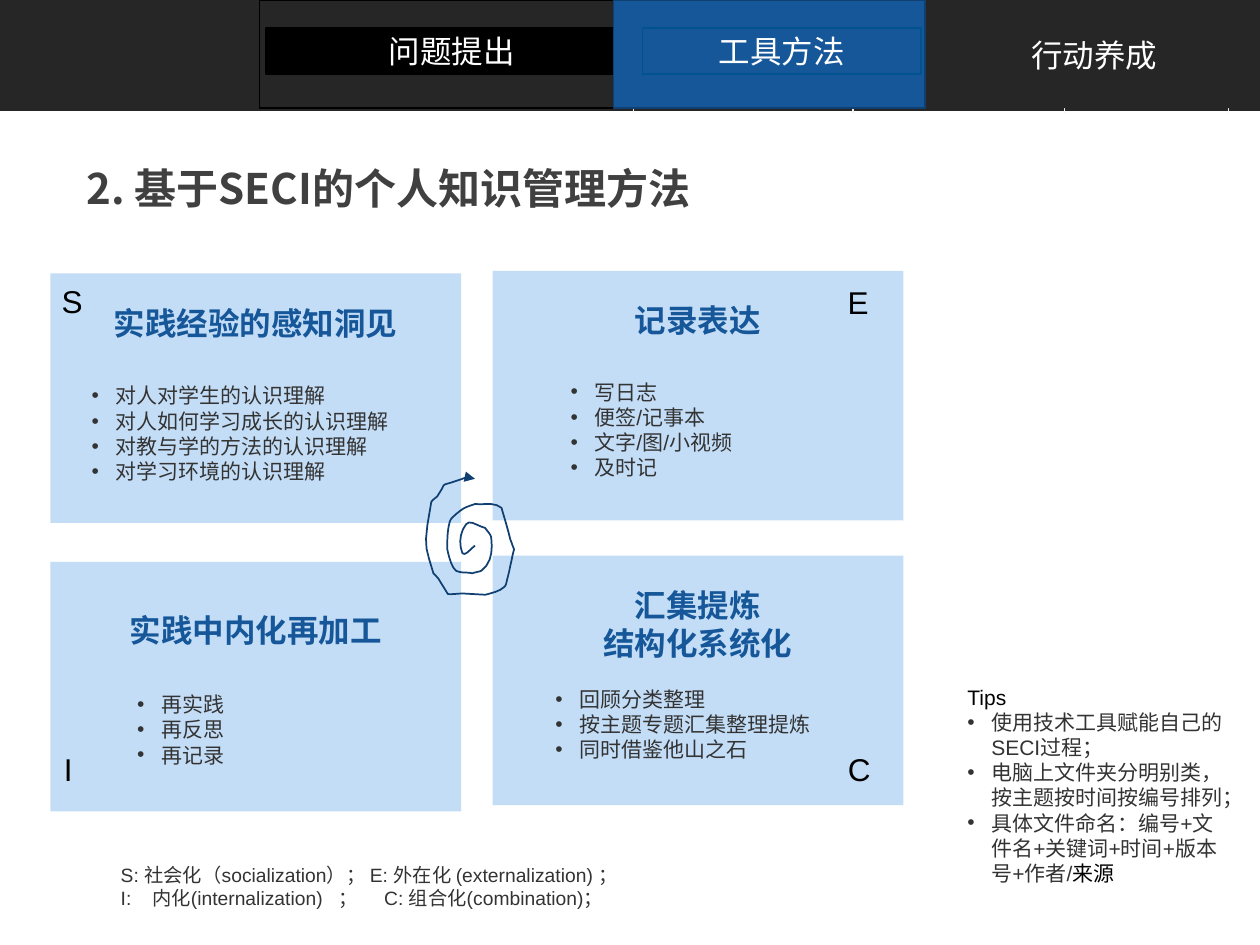
"""Build the slide on personal knowledge management with SECI."""
from dataclasses import dataclass

from lxml.etree import SubElement
from pptx import Presentation
from pptx.dml.color import RGBColor
from pptx.enum.shapes import MSO_CONNECTOR, MSO_SHAPE
from pptx.enum.text import MSO_ANCHOR, PP_ALIGN
from pptx.oxml.ns import qn
from pptx.util import Inches, Pt


@dataclass(frozen=True)
class Theme:
    band: str = "262626"
    blue: str = "165799"
    navy: str = "104071"
    tab_edge: str = "00538E"
    card: str = "C4DDF7"
    black: str = "000000"
    white: str = "FFFFFF"
    divider: str = "F2F2F2"
    title: str = "404040"
    body: str = "333333"
    font: str = "Arial"
    title_font: str = "Noto Sans CJK SC"
    title_size: int = 24
    head_size: int = 18
    body_size: int = 12
    legend_size: int = 11


THEME = Theme()


def write(paragraph, text, size=THEME.body_size, color=THEME.body, bold=False,
          font=THEME.font, align=PP_ALIGN.LEFT, bullet=False, tabs=()):
    properties = paragraph._p.get_or_add_pPr()
    if bullet:
        properties.set("marL", str(Inches(0.19)))
        properties.set("indent", str(-Inches(0.19)))
        SubElement(properties, qn("a:buFont"), typeface=THEME.font)
        SubElement(properties, qn("a:buChar"), char="•")
    if tabs:
        stops = SubElement(properties, qn("a:tabLst"))
        for stop in tabs:
            SubElement(stops, qn("a:tab"), pos=str(Inches(stop)), algn="l")
    paragraph.alignment = align
    run = paragraph.add_run()
    run.text = text
    run.font.size = Pt(size)
    run.font.bold = bold
    run.font.name = font
    run.font.color.rgb = RGBColor.from_string(color)


class SlideBuilder:
    def __init__(self, slide, theme):
        self.slide = slide
        self.theme = theme

    def fill_text(self, frame, lines, **style):
        frame.word_wrap = True
        for index, line in enumerate(lines):
            paragraph = frame.paragraphs[0] if index == 0 else frame.add_paragraph()
            write(paragraph, line, **style)

    def box(self, place, fill, edge=None):
        shape = self.slide.shapes.add_shape(MSO_SHAPE.RECTANGLE, *map(Inches, place))
        shape.shadow.inherit = False
        shape.fill.solid()
        shape.fill.fore_color.rgb = RGBColor.from_string(fill)
        if edge:
            shape.line.color.rgb = RGBColor.from_string(edge)
            shape.line.width = Pt(1)
        else:
            shape.line.fill.background()
        return shape

    def tab(self, place, label, fill, edge=None):
        frame = self.box(place, fill, edge).text_frame
        frame.vertical_anchor = MSO_ANCHOR.MIDDLE
        self.fill_text(frame, [label], size=self.theme.head_size,
                       color=self.theme.white, align=PP_ALIGN.CENTER)

    def card(self, left, top, heading, inset):
        frame = self.box((left, top, 3.26, 1.98), self.theme.card).text_frame
        frame.vertical_anchor = MSO_ANCHOR.TOP
        frame.margin_top = Inches(inset)
        self.fill_text(frame, heading, size=self.theme.head_size, bold=True,
                       color=self.theme.blue, align=PP_ALIGN.CENTER)

    def text(self, place, lines, **style):
        frame = self.slide.shapes.add_textbox(*map(Inches, place)).text_frame
        self.fill_text(frame, lines, **style)
        return frame

    def divider(self, x):
        line = self.slide.shapes.add_connector(
            MSO_CONNECTOR.STRAIGHT, *map(Inches, (x, 0, x, 0.9)))
        line.line.color.rgb = RGBColor.from_string(self.theme.divider)
        line.line.width = Pt(0.75)
        SubElement(line._element.spPr, qn("a:effectLst"))

    def spiral(self, start, curves, steps=5):
        points = []
        here = start
        for x1, y1, x2, y2, x3, y3 in curves:
            for step in range(1, steps + 1):
                t = step / steps
                weights = ((1 - t) ** 3, 3 * t * (1 - t) ** 2, 3 * t * t * (1 - t), t ** 3)
                points.append(tuple(
                    1000 * sum(w * v for w, v in zip(weights, values))
                    for values in ((here[0], x1, x2, x3), (here[1], y1, y2, y3))))
            here = (x3, y3)
        builder = self.slide.shapes.build_freeform(
            1000 * start[0], 1000 * start[1], scale=Inches(1) / 1000)
        builder.add_line_segments(points, close=False)
        shape = builder.convert_to_shape()
        shape.shadow.inherit = False
        shape.fill.background()
        shape.line.color.rgb = RGBColor.from_string(self.theme.navy)
        shape.line.width = Pt(1)
        SubElement(shape.line._get_or_add_ln(), qn("a:tailEnd"), type="triangle")


CARDS = [
    (0.4, 2.17, ["实践经验的感知洞见"], 0.24),
    (3.91, 2.15, ["记录表达"], 0.24),
    (3.91, 4.41, ["汇集提炼", "结构化系统化"], 0.24),
    (0.4, 4.46, ["实践中内化再加工"], 0.39),
]
LETTERS = [("S", 0.39, 2.19, 1.37), ("E", 6.63, 2.2, 1.37),
           ("C", 6.63, 5.9, 0.55), ("I", 0.41, 5.9, 1.37)]
LISTS = [
    ((0.63, 2.99, 2.56, 0.91),
     ["对人对学生的认识理解", "对人如何学习成长的认识理解",
      "对教与学的方法的认识理解", "对学习环境的认识理解"]),
    ((4.43, 2.96, 1.54, 0.91), ["写日志", "便签/记事本", "文字/图/小视频", "及时记"]),
    ((4.31, 5.4, 2.31, 0.71), ["回顾分类整理", "按主题专题汇集整理提炼", "同时借鉴他山之石"]),
    ((0.99, 5.44, 1.85, 0.71), ["再实践", "再反思", "再记录"]),
]
TIPS = ["使用技术工具赋能自己的SECI过程；", "电脑上文件夹分明别类，按主题按时间按编号排列；",
        "具体文件命名：编号+文件名+关键词+时间+版本号+作者/"]
SPIRAL_START = (3.77, 4.33)
SPIRAL = [
    (3.74, 4.35, 3.69, 4.42, 3.67, 4.39), (3.64, 4.32, 3.65, 4.22, 3.7, 4.16),
    (3.73, 4.12, 3.8, 4.18, 3.85, 4.19), (3.87, 4.22, 3.9, 4.24, 3.9, 4.28),
    (3.91, 4.37, 3.9, 4.47, 3.82, 4.53), (3.8, 4.54, 3.77, 4.54, 3.75, 4.55),
    (3.71, 4.54, 3.66, 4.55, 3.62, 4.53), (3.58, 4.5, 3.56, 4.4, 3.55, 4.36),
    (3.55, 4.28, 3.55, 4.21, 3.57, 4.14), (3.58, 4.11, 3.6, 4.1, 3.62, 4.08),
    (3.69, 4.02, 3.69, 4.03, 3.77, 4), (3.84, 4.01, 3.92, 3.98, 3.98, 4.03),
    (3.98, 4.03, 4.04, 4.23, 4.05, 4.28), (4.05, 4.28, 4.08, 4.36, 4.08, 4.36),
    (4.06, 4.43, 4.05, 4.51, 4.03, 4.58), (4.02, 4.61, 4.02, 4.65, 4, 4.66),
    (3.96, 4.7, 3.85, 4.72, 3.85, 4.72), (3.44, 4.68, 3.62, 4.79, 3.49, 4.61),
    (3.48, 4.59, 3.46, 4.57, 3.44, 4.55), (3.37, 4.31, 3.36, 4.35, 3.42, 4),
    (3.42, 3.97, 3.45, 3.96, 3.47, 3.94), (3.57, 3.8, 3.45, 3.88, 3.67, 3.8),
    (3.76, 3.77, 3.73, 3.75, 3.77, 3.8),
]


def main():
    deck = Presentation()
    deck.slide_width, deck.slide_height = Inches(10), Inches(7.5)
    page = SlideBuilder(deck.slides.add_slide(deck.slide_layouts[6]), THEME)

    page.box((0, 0, 10, 0.88), THEME.band)
    for x in (5.03, 6.77, 8.45, 9.75):
        page.divider(x)
    for left, width in ((9.73, 0.12), (6.59, 2.02)):
        page.box((left, 0, width, 0.86), THEME.band)
    page.tab((7.53, 0.18, 2.31, 0.51), "行动养成", THEME.band)
    page.box((2.06, 0, 3.07, 0.86), THEME.band, THEME.black)
    page.tab((2.11, 0.22, 2.95, 0.37), "问题提出", THEME.black, THEME.black)
    page.box((4.87, 0, 2.47, 0.86), THEME.blue, THEME.navy)
    page.tab((5.1, 0.22, 2.21, 0.37), "工具方法", THEME.blue, THEME.tab_edge)

    page.text((0.59, 1.24, 7.7, 0.5), ["2. 基于SECI的个人知识管理方法"], bold=True,
              size=THEME.title_size, color=THEME.title, font=THEME.title_font)
    for card in CARDS:
        page.card(*card)
    for letter, left, top, width in LETTERS:
        page.text((left, top, width, 0.53), [letter], size=THEME.head_size, color=THEME.black)
    page.spiral(SPIRAL_START, SPIRAL)
    for place, items in LISTS:
        page.text(place, items, bullet=True)

    page.text((0.86, 6.8, 4.41, 0.47),
              ["S: 社会化（socialization）； E: 外在化 (externalization) ；",
               "I:\t内化(internalization)\t；\tC: 组合化(combination)；"],
              size=THEME.legend_size, tabs=(0.25, 1.73, 2.09))
    tips = page.text((7.58, 5.38, 2.24, 1.72), ["Tips"], color=THEME.black)
    for tip in TIPS:
        write(tips.add_paragraph(), tip, bullet=True)
    write(tips.paragraphs[-1], "来源", color=THEME.black)
    deck.save("out.pptx")


if __name__ == "__main__":
    main()
